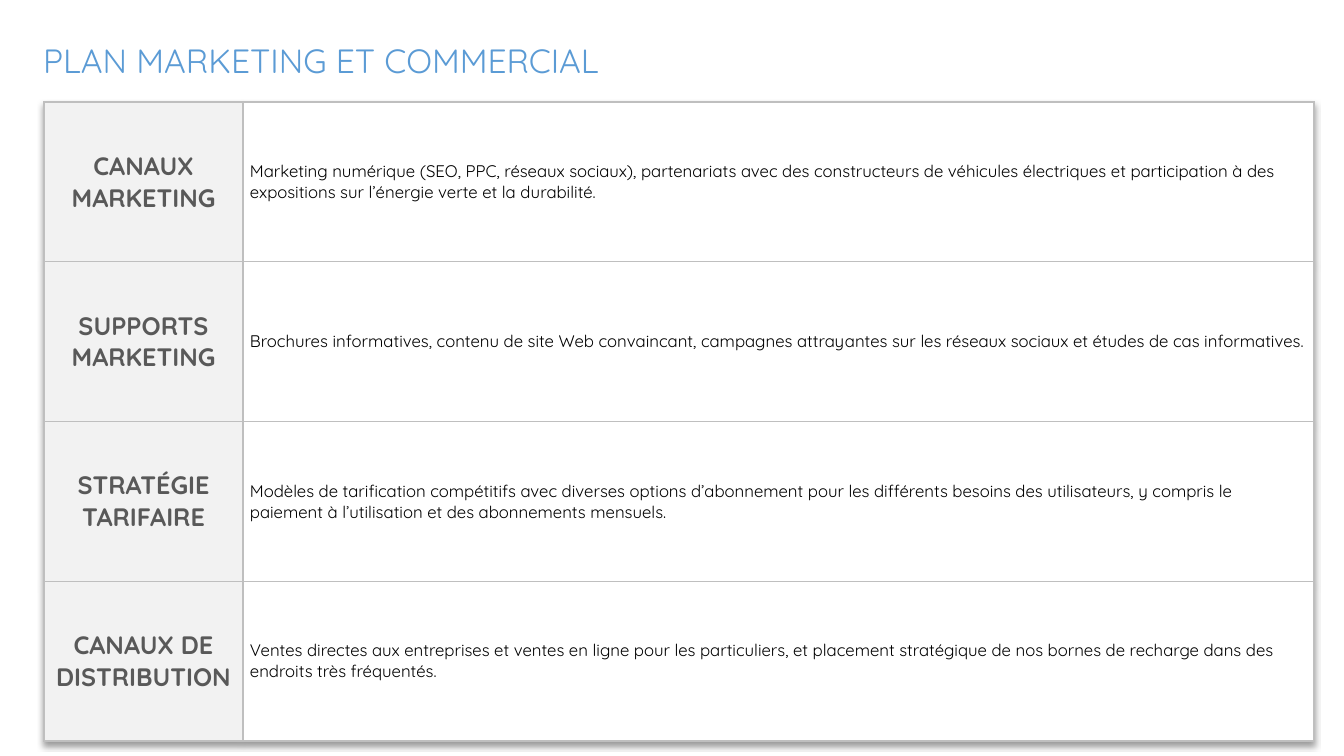
from lxml.etree import SubElement
from pptx import Presentation
from pptx.dml.color import RGBColor
from pptx.enum.text import MSO_ANCHOR, PP_ALIGN
from pptx.oxml import parse_xml
from pptx.oxml.ns import nsdecls, qn
from pptx.util import Pt

PX = 914400 / 100.8
SLIDE = (1344, 756)
TITLE_BOX = (33, 35, 814, 50)
PLAN_BOX = (44, 102, 1270, 639)
LABEL_WIDTH = 199
FONT = "Quicksand"
COLORS = {
    "title": "5B9BD5",
    "label": "595959",
    "label_fill": "F2F2F2",
    "detail": "000000",
    "detail_fill": "FFFFFF",
    "border": "BFBFBF",
}
TITLE_FONT = {"name": FONT, "size": Pt(24), "bold": False}
LABEL_FONT = {"name": FONT, "size": Pt(18), "bold": True}
DETAIL_FONT = {"name": FONT, "size": Pt(12), "bold": False}
MIDDLE = {"vertical_anchor": MSO_ANCHOR.MIDDLE}
PLAN = [
    ("CANAUX MARKETING",
     "Marketing numérique (SEO, PPC, réseaux sociaux), partenariats avec des constructeurs de "
     "véhicules électriques et participation à des expositions sur l’énergie verte et la durabilité."),
    ("SUPPORTS MARKETING",
     "Brochures informatives, contenu de site Web convaincant, campagnes attrayantes sur les "
     "réseaux sociaux et études de cas informatives."),
    ("STRATÉGIE TARIFAIRE",
     "Modèles de tarification compétitifs avec diverses options d’abonnement pour les différents "
     "besoins des utilisateurs, y compris le paiement à l’utilisation et des abonnements mensuels."),
    ("CANAUX DE DISTRIBUTION",
     "Ventes directes aux entreprises et ventes en ligne pour les particuliers, et placement "
     "stratégique de nos bornes de recharge dans des endroits très fréquentés."),
]


def px(length):
    """Turn a length in px into EMU."""
    return round(length * PX)


def apply(target, values):
    """Set every attribute of a dict on the target."""
    for attribute, value in values.items():
        setattr(target, attribute, value)


def write(paragraph, wording, font, color, alignment):
    """Fill a paragraph with one formatted run."""
    paragraph.alignment = alignment
    run = paragraph.add_run()
    run.text = wording
    apply(run.font, font)
    run.font.color.rgb = RGBColor.from_string(COLORS[color])


def add_borders(cell):
    """Draw a thin line on the four sides of a cell."""
    properties = cell._tc.get_or_add_tcPr()
    for side in ("a:lnL", "a:lnR", "a:lnT", "a:lnB"):
        line = SubElement(properties, qn(side), w=str(Pt(1)))
        fill = SubElement(line, qn("a:solidFill"))
        SubElement(fill, qn("a:srgbClr"), val=COLORS["border"])


def fill_cell(cell, wording, role, font, alignment, margins):
    """Give a cell its borders, fill and text."""
    add_borders(cell)
    cell.fill.solid()
    cell.fill.fore_color.rgb = RGBColor.from_string(COLORS[role + "_fill"])
    apply(cell, {**MIDDLE, **margins})
    write(cell.text_frame.paragraphs[0], wording, font, role, alignment)


def add_shadow(table):
    """Cast a soft shadow below the table."""
    table._tbl.tblPr.insert(0, parse_xml(
        f'<a:effectLst {nsdecls("a")}>'
        '<a:outerShdw blurRad="50800" dist="38100" dir="5400000" algn="t" rotWithShape="0">'
        '<a:srgbClr val="000000"><a:alpha val="40000"/></a:srgbClr>'
        '</a:outerShdw></a:effectLst>'))


def place_title(slide, box):
    """Place and format the slide title in its box."""
    title = slide.shapes.title
    apply(title, dict(zip(("left", "top", "width", "height"), map(px, box))))
    apply(title.text_frame, {**MIDDLE, "word_wrap": True})
    write(title.text_frame.paragraphs[0], "PLAN MARKETING ET COMMERCIAL",
          TITLE_FONT, "title", PP_ALIGN.LEFT)


def place_plan(slide, box):
    """Place the plan table, one row per topic, in its box."""
    table = slide.shapes.add_table(len(PLAN), 2, *map(px, box)).table
    apply(table, {"first_row": False, "horz_banding": False})
    add_shadow(table)
    for column, width in zip(table.columns, (LABEL_WIDTH, box[2] - LABEL_WIDTH)):
        column.width = px(width)
    detail_margins = {"margin_left": px(7), "margin_right": px(7),
                      "margin_top": 0, "margin_bottom": 0}
    for row, (label, detail) in zip(table.rows, PLAN):
        row.height = px(box[3] / len(PLAN))
        label_cell, detail_cell = row.cells
        fill_cell(label_cell, label, "label", LABEL_FONT, PP_ALIGN.CENTER, {})
        fill_cell(detail_cell, detail, "detail", DETAIL_FONT, PP_ALIGN.LEFT, detail_margins)


def main():
    """Build and save the presentation."""
    presentation = Presentation()
    apply(presentation, dict(zip(("slide_width", "slide_height"), map(px, SLIDE))))
    slide = presentation.slides.add_slide(presentation.slide_layouts.get_by_name("Title Only"))
    place_title(slide, TITLE_BOX)
    place_plan(slide, PLAN_BOX)
    presentation.save("out.pptx")


if __name__ == "__main__":
    main()
